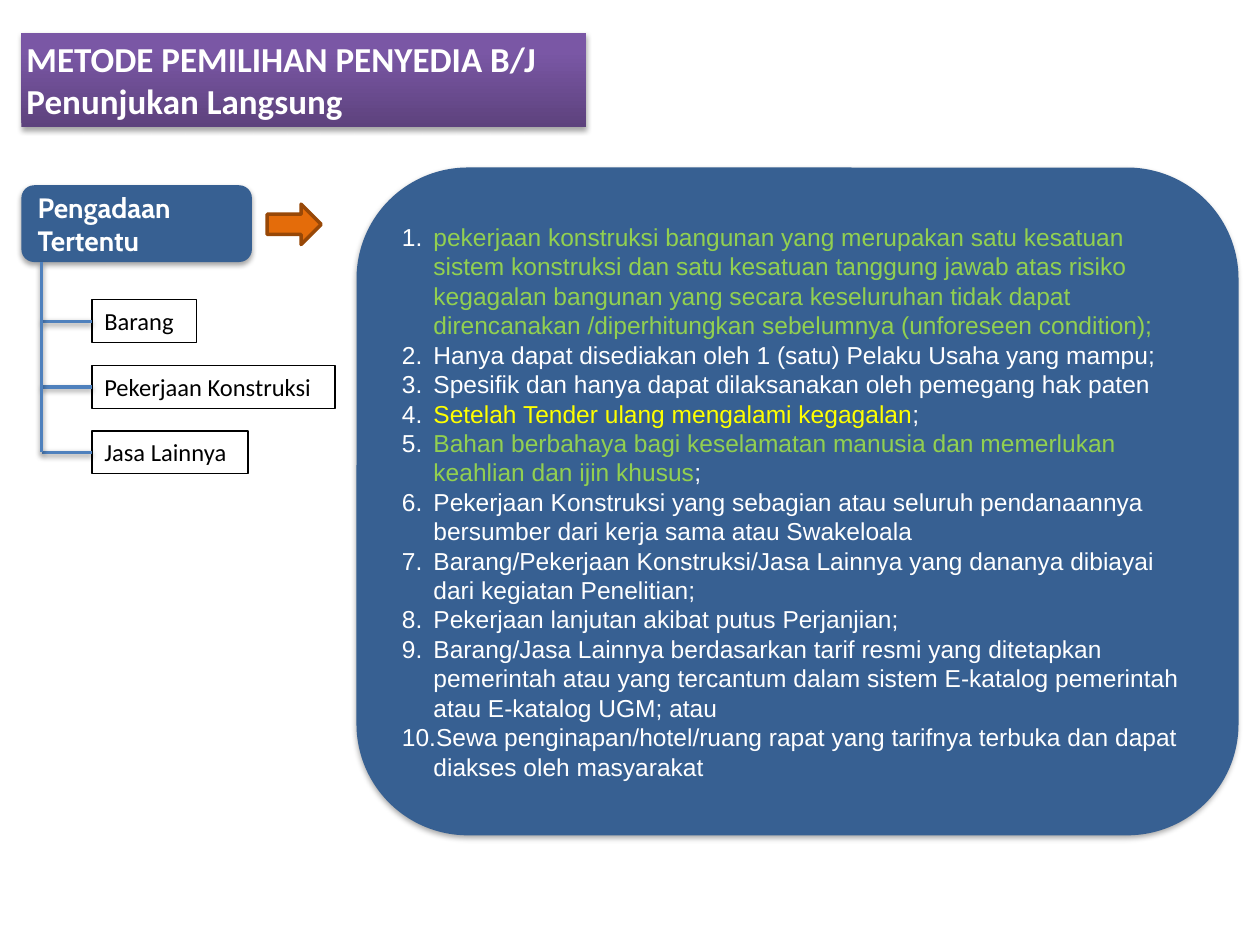
"""Build the slide on direct appointment as a way of choosing a provider."""
import lxml.etree
import pptx
import pptx.dml.color
import pptx.enum.shapes
import pptx.enum.text
import pptx.oxml.ns
import pptx.util

Inches = pptx.util.Inches
Pt = pptx.util.Pt
SHAPE = pptx.enum.shapes.MSO_SHAPE
ALIGN = pptx.enum.text.PP_ALIGN
ANCHOR = pptx.enum.text.MSO_ANCHOR
WHITE, BLACK, NAVY, GREEN, YELLOW = "FFFFFF", "000000", "376092", "92D050", "FFFF00"
TITLE = {"name": "Calibri", "size": Pt(20), "bold": True}
HEADING = {"name": "Cabin", "size": Pt(16), "bold": True}
LABEL = {"name": "Calibri", "size": Pt(14)}
LIST = {"name": "Arial", "size": Pt(14)}

CRITERIA = [
    [("pekerjaan konstruksi bangunan yang merupakan satu kesatuan sistem konstruksi dan "
      "satu kesatuan tanggung jawab atas risiko kegagalan bangunan yang secara keseluruhan "
      "tidak dapat direncanakan /diperhitungkan sebelumnya (unforeseen condition);", GREEN)],
    [("Hanya dapat disediakan oleh 1 (satu) Pelaku Usaha yang mampu;", WHITE)],
    [("Spesifik dan hanya dapat dilaksanakan oleh pemegang hak paten", WHITE)],
    [("Setelah Tender ulang mengalami kegagalan", YELLOW), (";", WHITE)],
    [("Bahan berbahaya bagi keselamatan manusia dan memerlukan keahlian dan ijin khusus",
      GREEN), (";", WHITE)],
    [("Pekerjaan Konstruksi yang sebagian atau seluruh pendanaannya bersumber dari "
      "kerja sama atau Swakeloala", WHITE)],
    [("Barang/Pekerjaan Konstruksi/Jasa Lainnya yang dananya dibiayai dari kegiatan "
      "Penelitian;", WHITE)],
    [("Pekerjaan lanjutan akibat putus Perjanjian;", WHITE)],
    [("Barang/Jasa Lainnya berdasarkan tarif resmi yang ditetapkan pemerintah atau yang "
      "tercantum dalam sistem E-katalog pemerintah atau E-katalog UGM; atau", WHITE)],
    [("Sewa penginapan/hotel/ruang rapat yang tarifnya terbuka dan dapat diakses oleh "
      "masyarakat", WHITE)],
]
CATEGORIES = [("Barang", 0.83), ("Pekerjaan Konstruksi", 1.93), ("Jasa Lainnya", 1.24)]


def rgb(value):
    return pptx.dml.color.RGBColor.from_string(value)


def apply(target, values):
    for name, value in values.items():
        setattr(target, name, value)


def add_xml(parent, tag, **attributes):
    return lxml.etree.SubElement(parent, pptx.oxml.ns.qn(tag), attributes)


class SlideBuilder:
    def __init__(self, slide):
        self.slide = slide

    def place(self, shape, left, top, width, height):
        apply(shape, {"left": Inches(left), "top": Inches(top),
                      "width": Inches(width), "height": Inches(height)})

    def shadow(self, shape, opacity, distance):
        effects = add_xml(shape.element.spPr, "a:effectLst")
        outer = add_xml(effects, "a:outerShdw", blurRad=str(Pt(3.1)), dist=str(Pt(distance)),
                        dir="5400000", rotWithShape="0")
        color = add_xml(outer, "a:srgbClr", val=BLACK)
        add_xml(color, "a:alpha", val=str(opacity * 1000))

    def add_text(self, shape, paragraphs, style, numbered=False, **frame_values):
        frame = shape.text_frame
        apply(frame, {"word_wrap": True, **frame_values})
        for index, spans in enumerate(paragraphs):
            para = frame.add_paragraph() if index else frame.paragraphs[0]
            apply(para, {"alignment": ALIGN.LEFT, "space_before": Pt(0)})
            if numbered:
                self.number(para)
            for text, color in spans:
                span = para.add_run()
                span.text = text
                apply(span.font, style)
                span.font.color.rgb = rgb(color)

    def number(self, para):
        properties = para._p.get_or_add_pPr()
        properties.set("marL", str(Inches(0.25)))
        properties.set("indent", str(-Inches(0.25)))
        add_xml(add_xml(properties, "a:buClr"), "a:srgbClr", val=WHITE)
        add_xml(properties, "a:buFont", typeface="+mj-lt")
        add_xml(properties, "a:buAutoNum", type="arabicPeriod")

    def title(self, lines, *position):
        box = self.slide.shapes.title
        self.place(box, *position)
        box.fill.gradient()
        box.fill.gradient_angle = 90
        for stop, place, color in zip(box.fill.gradient_stops, (0, 0.8), ("5D427D", "7A57A5")):
            stop.position = place
            stop.color.rgb = rgb(color)
        self.shadow(box, 35, 1.8)
        self.add_text(box, [[(line, WHITE)] for line in lines], TITLE,
                      vertical_anchor=ANCHOR.MIDDLE,
                      auto_size=pptx.enum.text.MSO_AUTO_SIZE.NONE,
                      margin_left=Inches(0.04), margin_right=Inches(0.04))

    def numbered_list(self, items, *position):
        body = self.slide.placeholders[1]
        self.place(body, *position)
        self.slide.shapes.element.append(body.element)
        self.add_text(body, items, LIST, numbered=True, vertical_anchor=ANCHOR.MIDDLE,
                      auto_size=pptx.enum.text.MSO_AUTO_SIZE.NONE)

    def panel(self, *position):
        box = self.slide.shapes.add_shape(SHAPE.ROUNDED_RECTANGLE, *map(Inches, position))
        box.fill.solid()
        box.fill.fore_color.rgb = rgb(NAVY)
        box.line.fill.background()
        self.shadow(box, 35, 1.8)
        return box

    def heading(self, lines, *position):
        self.add_text(self.panel(*position), [[(line, WHITE)] for line in lines], HEADING,
                      vertical_anchor=ANCHOR.MIDDLE)

    def arrow(self, *position):
        arrow = self.slide.shapes.add_shape(SHAPE.RIGHT_ARROW, *map(Inches, position))
        arrow.shadow.inherit = False
        arrow.fill.solid()
        arrow.fill.fore_color.rgb = rgb("E46C0A")
        arrow.line.color.rgb = rgb("984807")
        arrow.line.width = Pt(2)

    def label(self, text, *position):
        box = self.slide.shapes.add_textbox(*map(Inches, position))
        box.line.color.rgb = rgb(BLACK)
        box.line.width = Pt(0.75)
        self.add_text(box, [[(text, BLACK)]], LABEL)
        return box

    def line(self, *ends):
        line = self.slide.shapes.add_connector(
            pptx.enum.shapes.MSO_CONNECTOR.STRAIGHT, *map(Inches, ends))
        line.line.color.rgb = rgb("4F81BD")
        line.line.width = Pt(2)
        self.shadow(line, 38, 1.6)
        return line


def main():
    deck = pptx.Presentation()
    apply(deck, {"slide_width": Inches(10), "slide_height": Inches(7.5)})
    page = SlideBuilder(deck.slides.add_slide(deck.slide_layouts[1]))
    page.title(["METODE PEMILIHAN PENYEDIA B/J", "Penunjukan Langsung"], 0.17, 0.26, 4.48, 0.75)
    page.heading(["Pengadaan", "Tertentu"], 0.17, 1.47, 1.83, 0.61)
    page.arrow(2.12, 1.62, 0.43, 0.32)
    page.panel(2.83, 1.33, 7, 5.3)
    page.numbered_list(CRITERIA, 3.09, 1.59, 6.48, 4.78)

    trunk, left, top, height, pitch = 0.33, 0.73, 2.38, 0.34, 0.52
    for index, (text, width) in enumerate(CATEGORIES):
        label_top = top + index * pitch
        middle = label_top + height / 2
        box = page.label(text, left, label_top, width, height)
        page.line(trunk, middle, left, middle).end_connect(box, 1)
    page.line(trunk, 2.08, trunk, middle)
    deck.save("out.pptx")


if __name__ == "__main__":
    main()
